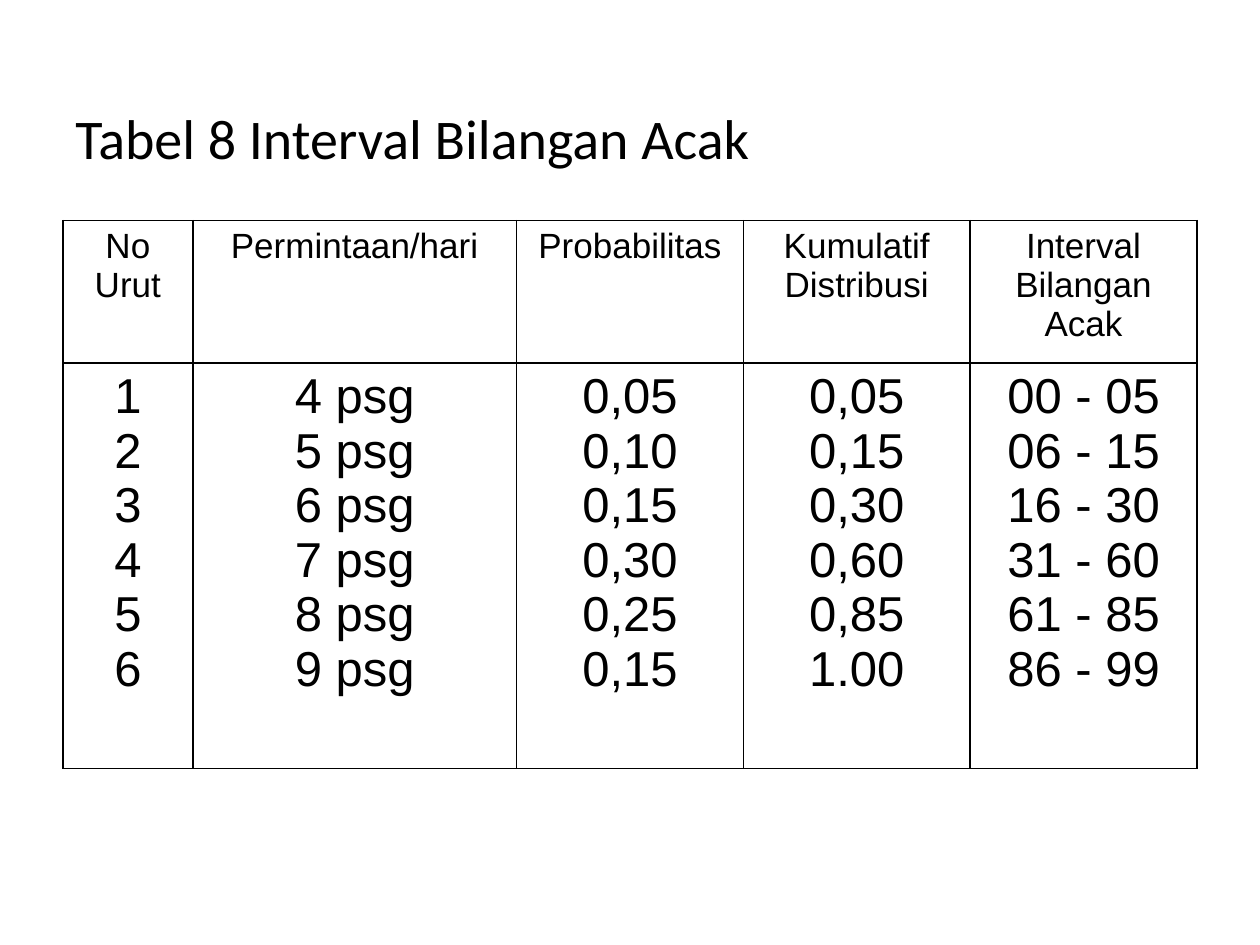
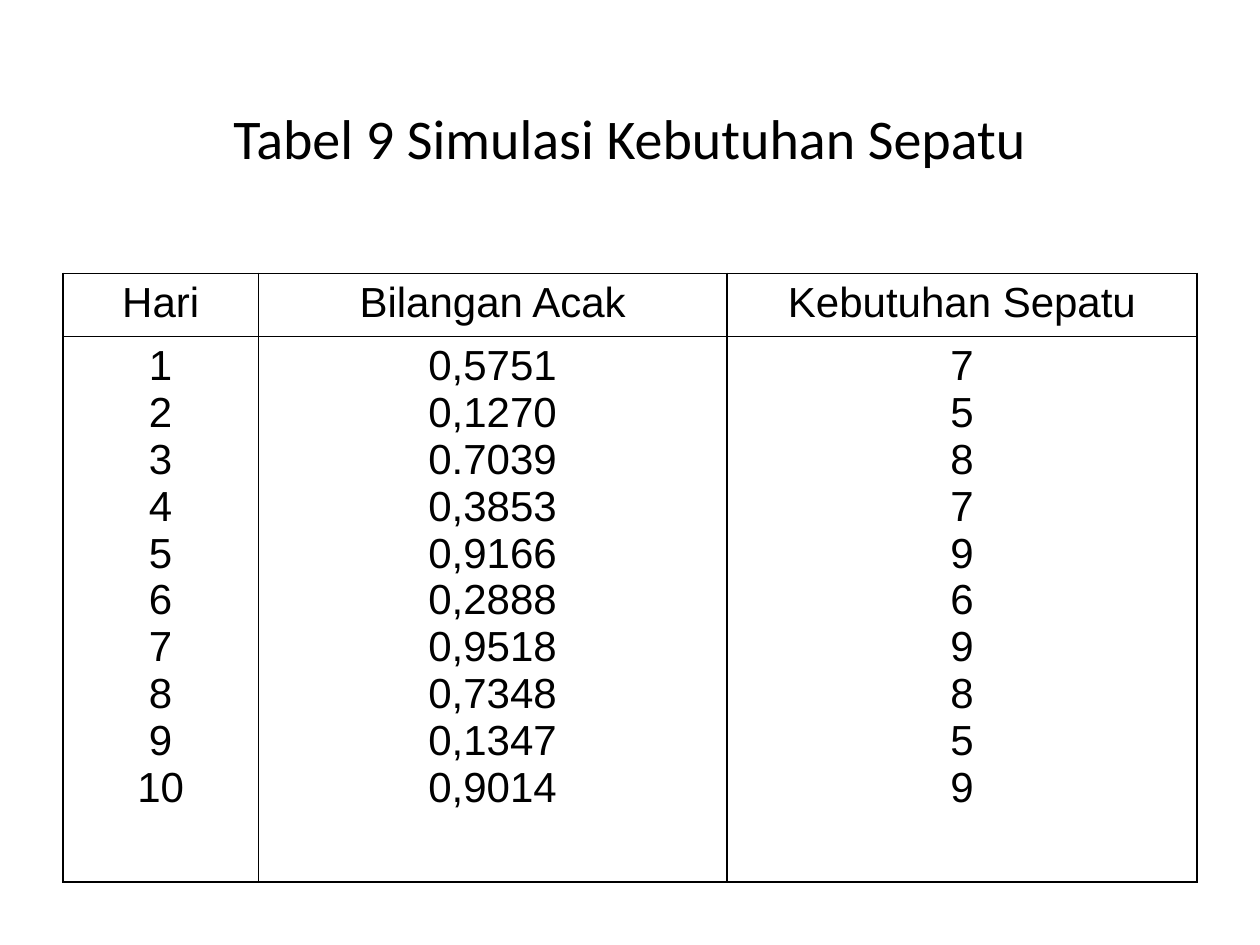
from lxml.etree import SubElement
from pptx import Presentation
from pptx.dml.color import RGBColor
from pptx.enum.text import MSO_ANCHOR, PP_ALIGN
from pptx.oxml.ns import qn
from pptx.util import Inches, Pt

BLACK, WHITE = "000000", "FFFFFF"
TITLE_FONT, TABLE_FONT = "Calibri", "Arial"
LEFT, WIDTH = 0.5, 9
TITLE_TOP, TITLE_HEIGHT = 0.69, 0.8

DEMAND_HEADERS = ["No\nUrut", "Permintaan/hari", "Probabilitas",
                  "Kumulatif\nDistribusi", "Interval Bilangan\nAcak"]
DEMAND_ROWS = [
    ("1", "4 psg", "0,05", "0,05", "00 - 05"),
    ("2", "5 psg", "0,10", "0,15", "06 - 15"),
    ("3", "6 psg", "0,15", "0,30", "16 - 30"),
    ("4", "7 psg", "0,30", "0,60", "31 - 60"),
    ("5", "8 psg", "0,25", "0,85", "61 - 85"),
    ("6", "9 psg", "0,15", "1.00", "86 - 99"),
]
SIMULATION_HEADERS = ["Hari", "Bilangan Acak", "Kebutuhan Sepatu"]
SIMULATION_ROWS = [
    ("1", "0,5751", "7"),
    ("2", "0,1270", "5"),
    ("3", "0.7039", "8"),
    ("4", "0,3853", "7"),
    ("5", "0,9166", "9"),
    ("6", "0,2888", "6"),
    ("7", "0,9518", "9"),
    ("8", "0,7348", "8"),
    ("9", "0,1347", "5"),
    ("10", "0,9014", "9"),
]


def color(value):
    return RGBColor.from_string(value)


def write(frame, text, *, size, font, align=PP_ALIGN.CENTER):
    """Fill a text frame with one paragraph for each line of text."""
    frame.word_wrap = True
    for index, line in enumerate(text.split("\n")):
        para = frame.add_paragraph() if index else frame.paragraphs[0]
        para.alignment = align
        span = para.add_run()
        span.text = line
        span.font.size = Pt(size)
        span.font.name = font
        span.font.bold = False
        span.font.color.rgb = color(BLACK)


def add_title(page, text, align):
    box = page.shapes.add_textbox(Inches(LEFT), Inches(TITLE_TOP),
                                  Inches(WIDTH), Inches(TITLE_HEIGHT))
    box.text_frame.vertical_anchor = MSO_ANCHOR.MIDDLE
    write(box.text_frame, text, size=32, font=TITLE_FONT, align=align)


def set_borders(cell):
    """Draw thin lines on all sides; borders must precede the cell fill."""
    properties = cell._tc.get_or_add_tcPr()
    for side in ("a:lnL", "a:lnR", "a:lnT", "a:lnB"):
        line = SubElement(properties, qn(side), w=str(Pt(1)))
        fill = SubElement(line, qn("a:solidFill"))
        SubElement(fill, qn("a:srgbClr"), val=BLACK)


def add_data_table(page, headers, records, *, top, widths, heights, sizes):
    """Add a header row above one tall row that stacks each column's values."""
    frame = page.shapes.add_table(2, len(headers), Inches(LEFT), Inches(top),
                                  Inches(WIDTH), Inches(sum(heights)))
    table = frame.table
    table.horz_banding = False
    for column, width in zip(table.columns, widths):
        column.width = Inches(width)
    stacked = ["\n".join(values) for values in zip(*records)]
    for row, height, size, texts in zip(table.rows, heights, sizes, (headers, stacked)):
        row.height = Inches(height)
        for cell, text in zip(row.cells, texts):
            set_borders(cell)
            cell.fill.solid()
            cell.fill.fore_color.rgb = color(WHITE)
            write(cell.text_frame, text, size=size, font=TABLE_FONT)


def add_page(deck, title, align):
    page = deck.slides.add_slide(deck.slide_layouts[6])
    page.background.fill.solid()
    page.background.fill.fore_color.rgb = color(WHITE)
    add_title(page, title, align)
    return page


def main():
    deck = Presentation()
    deck.slide_width, deck.slide_height = Inches(10), Inches(7.5)

    page = add_page(deck, "Tabel 8 Interval Bilangan Acak", PP_ALIGN.LEFT)
    add_data_table(page, DEMAND_HEADERS, DEMAND_ROWS, top=1.75,
                   widths=[1.03, 2.57, 1.8, 1.8, 1.8], heights=[1.13, 3.22],
                   sizes=[20, 28])

    page = add_page(deck, "Tabel 9 Simulasi Kebutuhan Sepatu", PP_ALIGN.CENTER)
    add_data_table(page, SIMULATION_HEADERS, SIMULATION_ROWS, top=2.17,
                   widths=[1.55, 3.72, 3.73], heights=[0.48, 4.33],
                   sizes=[24, 24])

    deck.save("out.pptx")


if __name__ == "__main__":
    main()
